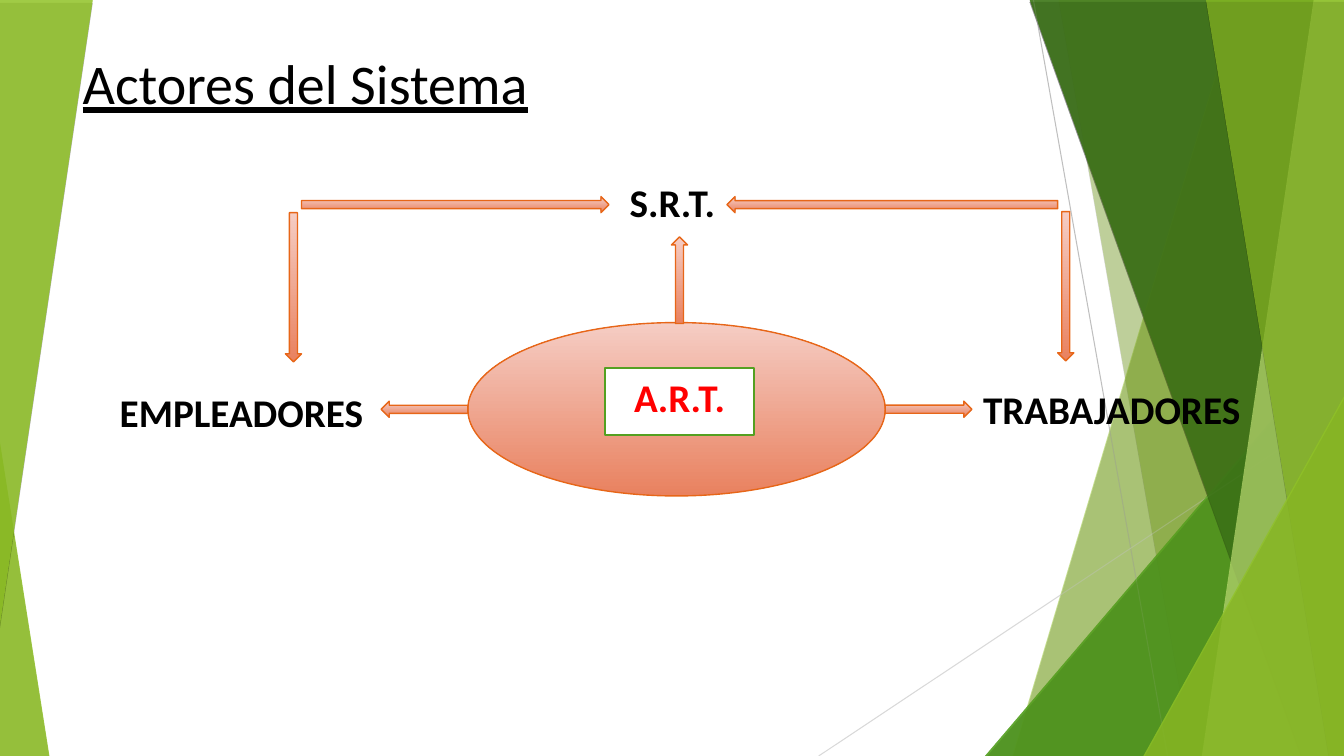
from math import atan2, degrees, hypot

from lxml import etree
from pptx import Presentation
from pptx.dml.color import RGBColor
from pptx.enum.shapes import MSO_CONNECTOR, MSO_SHAPE as Shape
from pptx.enum.text import MSO_ANCHOR, MSO_AUTO_SIZE, PP_ALIGN as Align
from pptx.oxml.ns import qn
from pptx.util import Inches, Pt

WIDTH, HEIGHT, TOP = 13.33, 7.5, -0.01
GREEN, DARK_GREEN, MID_GREEN = "90C226", "3F7819", "54A021"


def rgb(value):
    return RGBColor.from_string(value)


def write(frame, text, size=28, color="000000", bold=False, underline=False,
          align=Align.CENTER, before=5.6):
    frame.word_wrap = True
    frame.auto_size = MSO_AUTO_SIZE.NONE
    frame.vertical_anchor = MSO_ANCHOR.TOP
    paragraph = frame.paragraphs[0]
    paragraph.alignment = align
    paragraph.space_before = Pt(before)
    run = paragraph.add_run()
    run.text = text
    font = run.font
    font.name, font.size, font.color.rgb = "Calibri", Pt(size), rgb(color)
    font.bold, font.underline = bold, underline


class ActorsSlide:
    outline = "E76618"
    gradient = ("E9815F", "F5CDC4")
    arrow_width = 0.16

    def __init__(self, slide):
        self.slide = slide
        self.shapes = slide.shapes

    def shape(self, kind, left, top, width, height):
        item = self.shapes.add_shape(kind, *map(Inches, (left, top, width, height)))
        item.shadow.inherit = False
        return item

    def glass(self, item, color, opacity):
        """Give a facet its translucent fill and the thin shadow below it."""
        item.fill.solid()
        item.fill.fore_color.rgb = rgb(color)
        item.line.fill.background()
        item.shadow.inherit = False
        properties = item._element.spPr
        tint = properties.find(qn("a:solidFill"))[0]
        etree.SubElement(tint, qn("a:alpha"), val=str(opacity * 1000))
        shadow = etree.SubElement(properties.find(qn("a:effectLst")), qn("a:outerShdw"),
                                  dist="25400", dir="5400000", rotWithShape="0")
        black = etree.SubElement(shadow, qn("a:srgbClr"), val="000000")
        etree.SubElement(black, qn("a:alpha"), val="35000")

    def band(self, top_x, bottom_x, color, opacity):
        """Facet from a slanted edge to the right side of the slide."""
        outline = self.shapes.build_freeform(Inches(top_x), Inches(TOP))
        corners = [(WIDTH, TOP), (WIDTH, HEIGHT), (bottom_x, HEIGHT)]
        outline.add_line_segments([(Inches(x), Inches(y)) for x, y in corners])
        self.glass(outline.convert_to_shape(), color, opacity)

    def triangle(self, left, top, width, height, color, opacity, apex=1, rotation=0):
        item = self.shape(Shape.ISOSCELES_TRIANGLE, left, top, width, height)
        item.adjustments[0] = apex
        item.rotation = rotation
        self.glass(item, color, opacity)

    def facets(self):
        self.band(12.28, 10.04, GREEN, 30)
        self.band(10.5, 11.82, GREEN, 20)
        self.triangle(9.77, 3.33, 3.56, 4.17, MID_GREEN, 72)
        self.band(10.21, 12.91, DARK_GREEN, 70)
        self.band(13.03, 11.92, "C0E474", 70)
        self.band(11.96, 13.18, GREEN, 65)
        self.triangle(11.34, 3.93, 1.99, 3.57, GREEN, 80)

    def line(self, start, end, color):
        item = self.shapes.add_connector(MSO_CONNECTOR.STRAIGHT,
                                         *map(Inches, (*start, *end)))
        item.line.color.rgb = rgb(color)
        item.line.width = Pt(0.75)
        etree.SubElement(item._element.spPr, qn("a:effectLst"))

    def salmon(self, item, rotation=0):
        """Shade from dark below to light above, whatever the rotation."""
        item.fill.gradient()
        item.fill.gradient_angle = (90 + rotation) % 360
        for stop, color in zip(item.fill.gradient_stops, self.gradient):
            stop.color.rgb = rgb(color)
        item.line.color.rgb = rgb(self.outline)
        item.line.width = Pt(1)

    def ellipse(self, *box):
        self.salmon(self.shape(Shape.OVAL, *box))

    def arrow(self, tail, head):
        dx, dy = head[0] - tail[0], head[1] - tail[1]
        length = hypot(dx, dy)
        rotation = round(degrees(atan2(dy, dx))) % 360
        item = self.shape(Shape.RIGHT_ARROW, (tail[0] + head[0] - length) / 2,
                          (tail[1] + head[1] - self.arrow_width) / 2,
                          length, self.arrow_width)
        item.rotation = rotation
        self.salmon(item, rotation)

    def framed(self, text, *box, **style):
        item = self.shape(Shape.RECTANGLE, *box)
        item.fill.solid()
        item.fill.fore_color.rgb = rgb("FFFFFF")
        item.line.color.rgb = rgb(MID_GREEN)
        item.line.width = Pt(1.5)
        write(item.text_frame, text, **style)

    def label(self, text, *box):
        item = self.shapes.add_textbox(*map(Inches, box))
        write(item.text_frame, text, bold=True)

    def title(self, text, left, top, width, height):
        item = self.shapes.title
        item.left, item.top = Inches(left), Inches(top)
        item.width, item.height = Inches(width), Inches(height)
        write(item.text_frame, text, size=40, underline=True, align=Align.LEFT, before=0)
        self.shapes._spTree.append(item._element)  # in front of the facets


def main():
    deck = Presentation()
    deck.slide_width, deck.slide_height = Inches(WIDTH), Inches(HEIGHT)
    actors = ActorsSlide(deck.slides.add_slide(deck.slide_layouts[5]))

    actors.facets()
    actors.triangle(0, 4.39, 0.49, 3.11, GREEN, 85, apex=0)
    actors.line((10.25, 0), (11.58, HEIGHT), "BFBFBF")
    actors.line((WIDTH, 4.03), (8.12, HEIGHT), "D9D9D9")
    actors.facets()
    actors.triangle(0, 0, 0.92, 6.2, GREEN, 85, rotation=180)

    actors.title("Actores del Sistema", 0.72, 0.43, 6.82, 0.77)
    actors.ellipse(4.64, 3.2, 4.14, 1.72)
    actors.framed("A.R.T.", 6, 3.65, 1.48, 0.67, color="FF0000", bold=True)
    actors.label("S.R.T.", 5.03, 1.72, 3.28, 0.67)
    actors.label("EMPLEADORES", 0.78, 3.8, 3.23, 0.62)
    actors.label("TRABAJADORES", 9.5, 3.77, 3.05, 0.67)

    for tail, head in [
        ((4.64, 4.06), (3.78, 4.06)),
        ((8.78, 4.06), (9.64, 4.06)),
        ((6.74, 3.21), (6.74, 2.35)),
        ((10.49, 2.03), (7.21, 2.03)),
        ((2.91, 2.11), (2.91, 3.59)),
        ((2.99, 2.03), (6.04, 2.03)),
        ((10.57, 2.1), (10.57, 3.58)),
    ]:
        actors.arrow(tail, head)

    deck.save("out.pptx")


if __name__ == "__main__":
    main()
